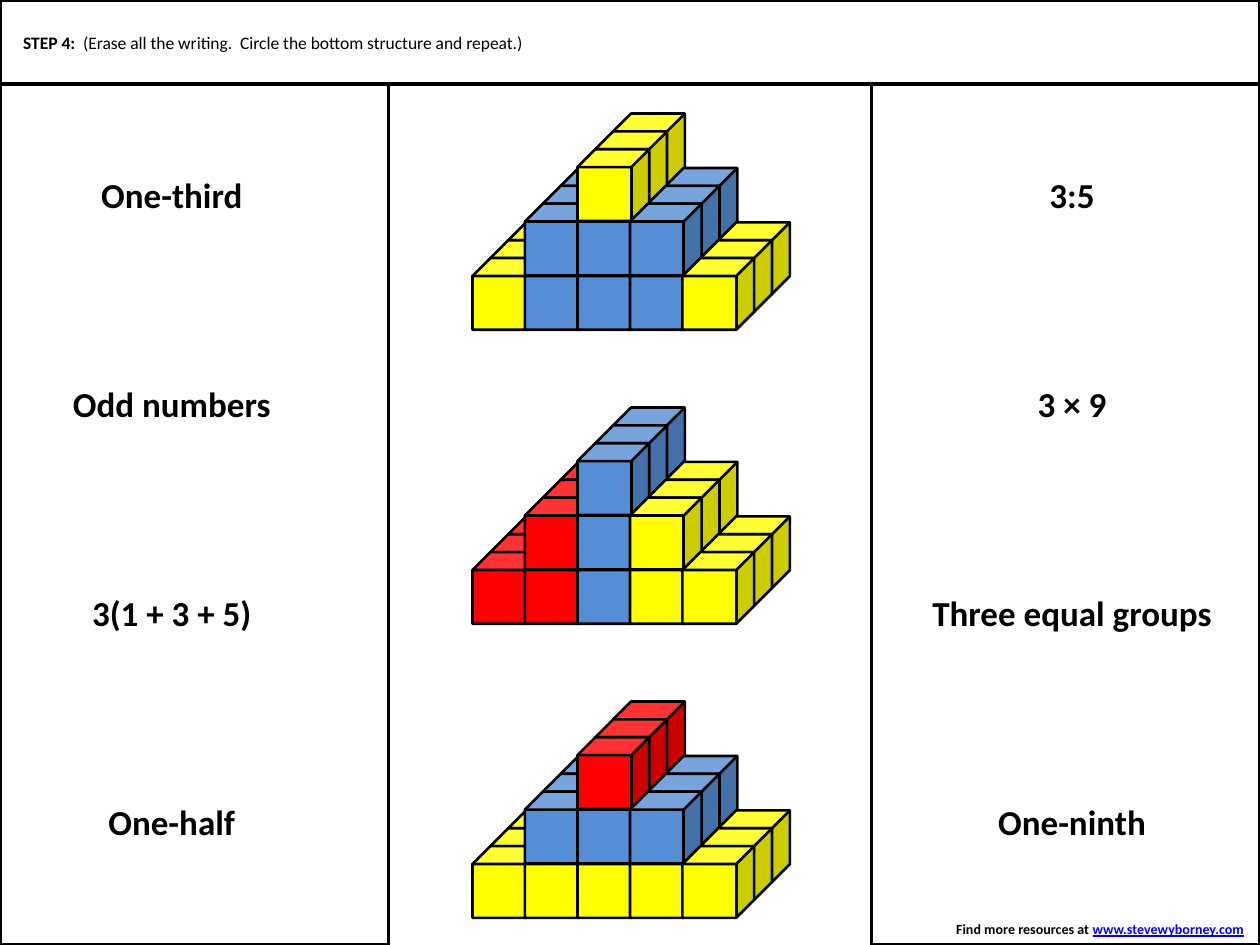
"""Build the matching slide with three cube structures between two columns of labels."""
from dataclasses import dataclass

from pptx import Presentation
from pptx import util as u
from pptx.dml.color import RGBColor
from pptx.enum import shapes, text

BLACK = RGBColor(0x00, 0x00, 0x00)
WHITE = RGBColor(0xFF, 0xFF, 0xFF)
LINK_BLUE = RGBColor(0x00, 0x00, 0xFF)
YELLOW = RGBColor(0xFF, 0xFF, 0x00)
BLUE = RGBColor(0x55, 0x8E, 0xD5)
RED = RGBColor(0xFF, 0x00, 0x00)
CUBE_COLORS = {"Y": YELLOW, "B": BLUE, "R": RED}

FONT = "Calibri"
CUBE_SIZE = 41
COLUMN_STEP, LEVEL_STEP, DEPTH_STEP = 30, 31.1, 10.2
FRONT_LEFT, FRONT_TOP, STRUCTURE_STEP = 270, 147.5, 168
LABEL_TOP, LABEL_STEP, LABEL_HEIGHT = 95.6, 119.5, 31.5


@dataclass(frozen=True)
class Box:
    left: float
    top: float
    width: float
    height: float

    def lengths(self) -> list[u.Length]:
        return [u.Pt(v) for v in (self.left, self.top, self.width, self.height)]


@dataclass(frozen=True)
class Run:
    text: str
    size: float
    bold: bool = True
    color: RGBColor = BLACK
    underline: bool = False


@dataclass(frozen=True)
class Label:
    text: str
    width: float


@dataclass(frozen=True)
class LabelColumn:
    center: float
    labels: tuple[Label, ...]


@dataclass(frozen=True)
class Structure:
    """Slices from back to front, each with its levels from the bottom up."""
    slices: tuple[tuple[str, ...], ...]


PANELS = (Box(0, 0, 222, 540), Box(498, 0, 222, 540))
HEADER = Box(0, 0, 720, 48)
TITLE = Box(6, 6, 708, 36)
FOOTER = Box(537, 522.5, 181, 17)

STRUCTURES = (
    Structure((("YBBBY", "BBB", "Y"),) * 3),
    Structure((("RBBYY", "RBY", "B"),) + (("RRBYY", "RBY", "B"),) * 2),
    Structure((("YYYYY", "BBB", "R"),) * 3),
)
LABEL_COLUMNS = (
    LabelColumn(98.2, (Label("One-third", 96), Label("Odd numbers", 129),
                       Label("3(1 + 3 + 5)", 106), Label("One-half", 88))),
    LabelColumn(612.6, (Label("3:5", 40), Label("3 × 9", 54),
                        Label("Three equal groups", 176), Label("One-ninth", 99))),
)


def add_runs(p, runs: tuple[Run, ...], align) -> None:
    p.alignment = align
    for run in runs:
        r = p.add_run()
        r.text = run.text
        r.font.name = FONT
        r.font.size = u.Pt(run.size)
        r.font.bold = run.bold
        r.font.underline = run.underline
        r.font.color.rgb = run.color


def add_box(s, kind, box: Box, fill: RGBColor | None, weight: float) -> None:
    sp = s.shapes.add_shape(kind, *box.lengths())
    sp.shadow.inherit = False
    if fill is None:
        sp.fill.background()
    else:
        sp.fill.solid()
        sp.fill.fore_color.rgb = fill
    sp.line.color.rgb = BLACK
    sp.line.width = u.Pt(weight)


def add_text(s, box: Box, runs: tuple[Run, ...], align) -> None:
    tf = s.shapes.add_textbox(*box.lengths()).text_frame
    tf.word_wrap = False
    tf.auto_size = text.MSO_AUTO_SIZE.SHAPE_TO_FIT_TEXT
    add_runs(tf.paragraphs[0], runs, align)


def add_title(s, box: Box, runs: tuple[Run, ...]) -> None:
    sp = s.shapes.title
    sp.left, sp.top, sp.width, sp.height = box.lengths()
    sp.fill.solid()
    sp.fill.fore_color.rgb = WHITE
    tf = sp.text_frame
    tf.word_wrap = True
    tf.auto_size = text.MSO_AUTO_SIZE.NONE
    tf.vertical_anchor = text.MSO_ANCHOR.MIDDLE
    add_runs(tf.paragraphs[0], runs, text.PP_ALIGN.LEFT)
    s.shapes.element.append(sp.element)


def add_structure(s, structure: Structure, front_top: float) -> None:
    last = len(structure.slices) - 1
    for index, levels in enumerate(structure.slices):
        depth = (last - index) * DEPTH_STEP
        for column in range(len(levels[0])):
            for level, row in enumerate(levels):
                if level <= column < level + len(row):
                    box = Box(FRONT_LEFT + column * COLUMN_STEP + depth,
                              front_top - level * LEVEL_STEP - depth,
                              CUBE_SIZE, CUBE_SIZE)
                    add_box(s, shapes.MSO_SHAPE.CUBE, box,
                            CUBE_COLORS[row[column - level]], 1.5)


def add_label_column(s, column: LabelColumn) -> None:
    for row, label in enumerate(column.labels):
        box = Box(column.center - label.width / 2, LABEL_TOP + row * LABEL_STEP,
                  label.width, LABEL_HEIGHT)
        add_text(s, box, (Run(label.text, 20),), text.PP_ALIGN.CENTER)


def main() -> None:
    prs = Presentation()
    prs.slide_width, prs.slide_height = u.Pt(720), u.Pt(540)
    s = prs.slides.add_slide(prs.slide_layouts.get_by_name("Title Only"))

    for panel in PANELS:
        add_box(s, shapes.MSO_SHAPE.RECTANGLE, panel, None, 2)
    add_box(s, shapes.MSO_SHAPE.RECTANGLE, HEADER, WHITE, 2)
    add_title(s, TITLE, (
        Run("STEP 4:  ", 10),
        Run("(Erase all the writing.  Circle the bottom structure and repeat.)", 10, bold=False),
    ))
    add_text(s, FOOTER, (
        Run("Find more resources at ", 8),
        Run("www.stevewyborney.com", 8, color=LINK_BLUE, underline=True),
    ), text.PP_ALIGN.RIGHT)
    for index, structure in enumerate(STRUCTURES):
        add_structure(s, structure, FRONT_TOP + index * STRUCTURE_STEP)
    for column in LABEL_COLUMNS:
        add_label_column(s, column)

    prs.save("out.pptx")


if __name__ == "__main__":
    main()
